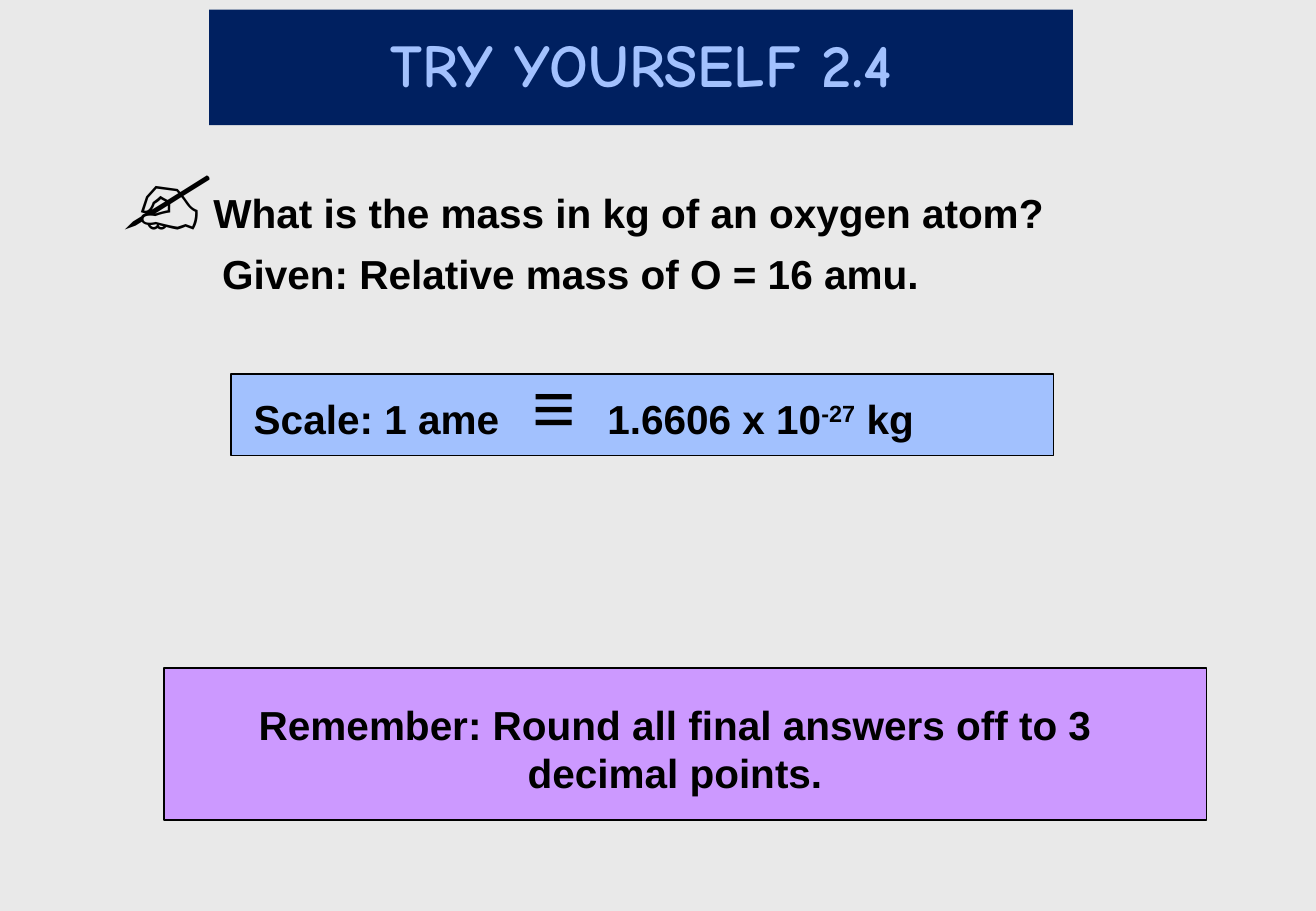
"""Build the "Try yourself 2.4" slide on the mass of an oxygen atom."""
from dataclasses import dataclass, field
from typing import Any

from lxml.etree import SubElement
from pptx import Presentation
from pptx.dml.color import RGBColor
from pptx.enum.shapes import MSO_SHAPE as Preset
from pptx.enum.text import MSO_ANCHOR as Anchor, PP_ALIGN as Align
from pptx.oxml.ns import qn
from pptx.util import Inches, Pt

GREY = RGBColor(0xE9, 0xE9, 0xE9)
NAVY = RGBColor(0x00, 0x20, 0x60)
SKY = RGBColor(0xA2, 0xC1, 0xFE)
LILAC = RGBColor(0xCC, 0x99, 0xFF)
BLACK = RGBColor(0x00, 0x00, 0x00)

BODY_FORMAT = {"name": "Arial", "size": Pt(24), "bold": True}


@dataclass
class Piece:
    text: str
    format: dict[str, Any] = field(default_factory=dict)
    color: RGBColor = BLACK
    baseline: int = 0


@dataclass
class Line:
    pieces: list[Piece]
    format: dict[str, Any] = field(default_factory=dict)
    indent: float = 0
    space_before: int = 0
    tabs: tuple[float, ...] = ()


@dataclass
class Panel:
    box: tuple[float, float, float, float]
    fill: RGBColor
    outline: RGBColor | None = BLACK


@dataclass
class Passage:
    box: tuple[float, float, float, float]
    lines: list[Line]


TITLE_PANEL = Panel((1.72, 0.08, 7.11, 0.95), NAVY, None)
TITLE_LINE = Line(
    [Piece("TRY YOURSELF 2.4", {"name": "Comic Neue", "size": Pt(36)}, SKY)],
    {"alignment": Align.CENTER, "line_spacing": 0.9},
)
SCALE_PANEL = Panel((1.9, 3.08, 6.77, 0.67), SKY)
REMINDER_PANEL = Panel((1.35, 5.5, 8.58, 1.25), LILAC)

QUESTION = Passage((0.9, 1, 9.12, 1.92), [
    Line([Piece("✍", {"size": Pt(60)}),
          Piece("What is the mass in kg of an oxygen atom?")]),
    Line([Piece("Given: Relative mass of O = 16 amu.")], indent=0.83),
])
SCALE = Passage((1.99, 2.92, 6.86, 0.84), [
    Line([Piece("Scale: 1 ame\t"),
          Piece("≡", {"size": Pt(44)}),
          Piece("\t1.6606 x 10"),
          Piece("-27", baseline=30),
          Piece(" kg")], space_before=50, tabs=(2.29, 2.91)),
])
REMINDER = Passage((1.4, 5.71, 8.31, 0.91), [
    Line([Piece("Remember: Round all final answers off to 3 decimal points.")],
         {"alignment": Align.CENTER}, space_before=50),
])


def apply_format(target: Any, values: dict[str, Any]) -> None:
    for attribute, value in values.items():
        setattr(target, attribute, value)


def write_line(paragraph: Any, line: Line) -> None:
    apply_format(paragraph, line.format)
    properties = paragraph._p.get_or_add_pPr()
    if line.indent:
        properties.set("marL", str(Inches(line.indent)))
    if line.space_before:
        before = SubElement(properties, qn("a:spcBef"))
        SubElement(before, qn("a:spcPct"), val=str(line.space_before * 1000))
    if line.tabs:
        stops = SubElement(properties, qn("a:tabLst"))
        for stop in line.tabs:
            SubElement(stops, qn("a:tab"), pos=str(Inches(stop)), algn="l")
    for piece in line.pieces:
        run = paragraph.add_run()
        run.text = piece.text
        apply_format(run.font, BODY_FORMAT | piece.format)
        run.font.color.rgb = piece.color
        if piece.baseline:
            run._r.get_or_add_rPr().set("baseline", str(piece.baseline * 1000))


def write_lines(frame: Any, lines: list[Line], anchor: Any) -> None:
    apply_format(frame, {"word_wrap": True, "vertical_anchor": anchor})
    for index, line in enumerate(lines):
        write_line(frame.add_paragraph() if index else frame.paragraphs[0], line)


def draw_panel(slide: Any, panel: Panel) -> Any:
    shape = slide.shapes.add_shape(Preset.RECTANGLE, *map(Inches, panel.box))
    shape.shadow.inherit = False
    shape.fill.solid()
    shape.fill.fore_color.rgb = panel.fill
    if panel.outline is None:
        shape.line.fill.background()
    else:
        shape.line.color.rgb = panel.outline
        shape.line.width = Pt(1)
    return shape


def draw_passage(slide: Any, passage: Passage) -> None:
    textbox = slide.shapes.add_textbox(*map(Inches, passage.box))
    write_lines(textbox.text_frame, passage.lines, Anchor.TOP)


def main() -> None:
    deck = Presentation()
    apply_format(deck, {"slide_width": Inches(10.83), "slide_height": Inches(7.5)})
    slide = deck.slides.add_slide(deck.slide_layouts[6])
    slide.background.fill.solid()
    slide.background.fill.fore_color.rgb = GREY

    draw_passage(slide, QUESTION)
    for panel, passage in ((SCALE_PANEL, SCALE), (REMINDER_PANEL, REMINDER)):
        draw_panel(slide, panel)
        draw_passage(slide, passage)
    title = draw_panel(slide, TITLE_PANEL)
    write_lines(title.text_frame, [TITLE_LINE], Anchor.MIDDLE)

    deck.save("out.pptx")


if __name__ == "__main__":
    main()
